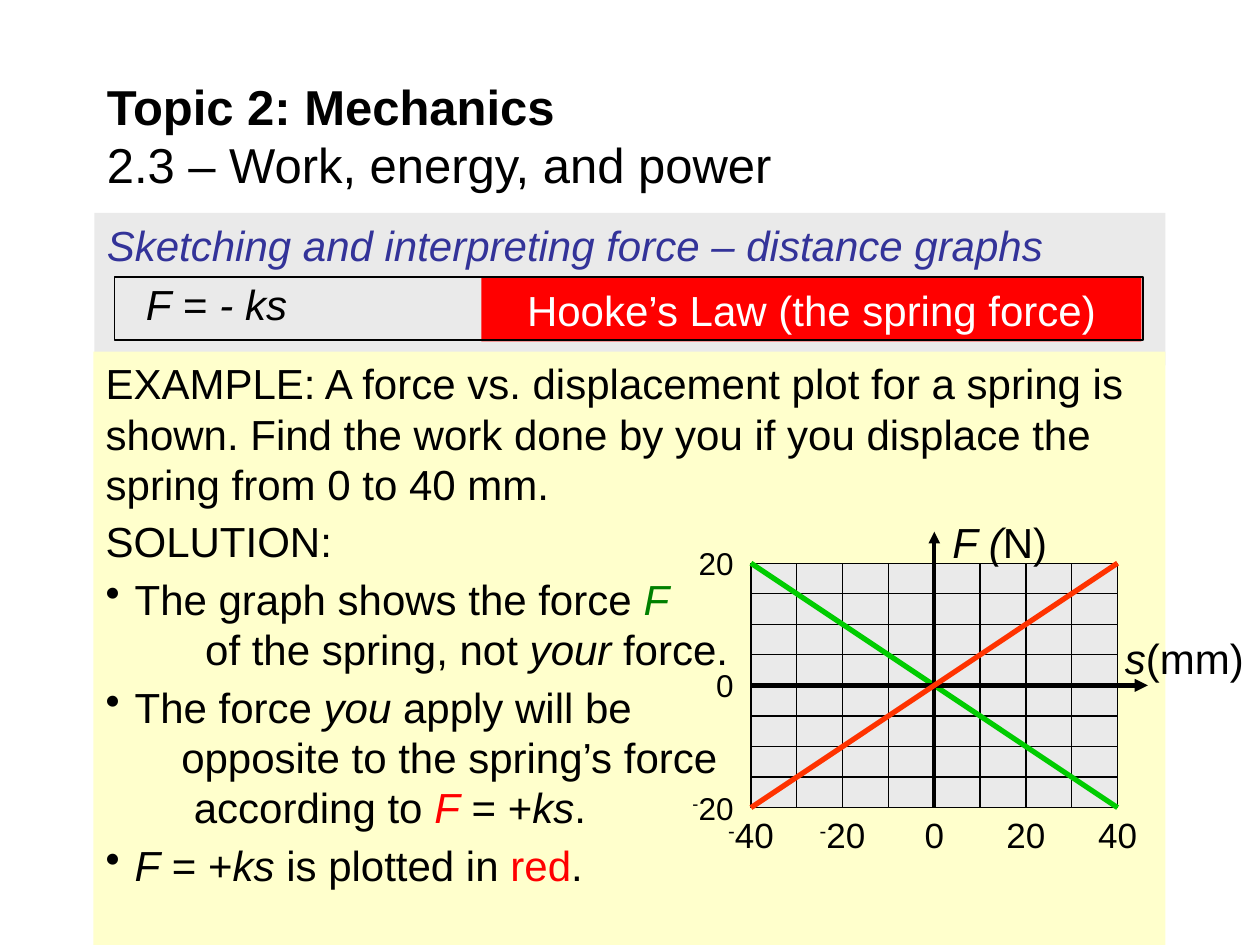
from pptx import Presentation
from pptx.dml.color import RGBColor
from pptx.enum.shapes import MSO_CONNECTOR, MSO_SHAPE
from pptx.enum.text import MSO_ANCHOR, PP_ALIGN
from pptx.oxml.ns import qn
from pptx.util import Inches, Pt
from lxml.etree import SubElement

BLACK, GRAY = "000000", "EAEAEA"
ITALIC = {"italic": True}
RAISED = {"raised": True}


def color(code):
    """Turn a hex string into a colour."""
    return RGBColor.from_string(code)


class Painter:
    """Holds the text style and the current page."""

    font = "Arial"

    def __init__(self, page):
        """Remember the page to draw on."""
        self.page = page

    def rectangle(self, left, top, width, height, fill=None, line=None):
        """Add a rectangle with an optional fill and outline width."""
        box = self.page.shapes.add_shape(
            MSO_SHAPE.RECTANGLE, Inches(left), Inches(top), Inches(width), Inches(height))
        box.shadow.inherit = False
        if fill:
            box.fill.solid()
            box.fill.fore_color.rgb = color(fill)
        else:
            box.fill.background()
        if line:
            box.line.color.rgb = color(BLACK)
            box.line.width = Pt(line)
        else:
            box.line.fill.background()
        return box

    def letter(self, box, lines, size=24, ink=BLACK, align=PP_ALIGN.LEFT,
               anchor=MSO_ANCHOR.TOP, wrap=True):
        """Fill a box with paragraphs given as lists of styled spans."""
        frame = box.text_frame
        frame.word_wrap = wrap
        frame.vertical_anchor = anchor
        frame.text = "\n".join(spans[0][0] for spans in lines)
        for para, spans in zip(frame.paragraphs, lines):
            para.alignment = align
            for text, _ in spans[1:]:
                para.add_run().text = text
            for span, (_, style) in zip(para.runs, spans):
                span.font.name = self.font
                span.font.size = Pt(size)
                span.font.bold = style.get("bold", False)
                span.font.italic = style.get("italic", False)
                span.font.color.rgb = color(style.get("ink", ink))
                if style.get("raised"):
                    span._r.get_or_add_rPr().set("baseline", "30000")
        return frame.paragraphs

    def label(self, left, top, width, height, lines, **style):
        """Add a text box."""
        box = self.page.shapes.add_textbox(
            Inches(left), Inches(top), Inches(width), Inches(height))
        return self.letter(box, lines, **style)

    def indent(self, para, left, bullet=False):
        """Indent a paragraph and hang a bullet in front of it."""
        properties = para._p.get_or_add_pPr()
        properties.set("marL", str(Inches(left)))
        properties.set("indent", str(-Inches(left) if bullet else 0))
        if bullet:
            SubElement(properties, qn("a:buChar")).set("char", "•")

    def line(self, start, end, ink, width, arrow=False):
        """Add a straight line with an optional arrowhead at its end."""
        connector = self.page.shapes.add_connector(
            MSO_CONNECTOR.STRAIGHT, *[Inches(value) for value in (*start, *end)])
        connector.line.color.rgb = color(ink)
        connector.line.width = Pt(width)
        properties = connector._element.spPr
        if arrow:
            SubElement(properties.find(qn("a:ln")), qn("a:tailEnd")).set("type", "triangle")
        SubElement(properties, qn("a:effectLst"))


def draw_header(painter):
    """Draw the title and the heading band."""
    band = painter.rectangle(0.75, 1.69, 8.5, 1.21, GRAY)
    painter.letter(band, [[("Sketching and interpreting force – distance graphs", ITALIC)]],
                   ink="333399")
    painter.label(0.75, 0.58, 8.5, 0.98, [
        [("Topic 2: Mechanics", {"bold": True})],
        [("2.3 – Work, energy, and power", {})],
    ], size=28, anchor=MSO_ANCHOR.MIDDLE)


def draw_example(painter):
    """Draw the example with its bulleted solution."""
    panel = painter.rectangle(0.74, 2.79, 8.51, 4.71, "FFFFCC")
    rows = [
        (0, False, [("EXAMPLE: A force vs. displacement plot for a spring is shown. Find the "
                     "work done by you if you displace the spring from 0 to 40 mm.", {})]),
        (0, False, [("SOLUTION:", {})]),
        (0.23, True, [("The graph shows the force ", {}),
                      ("F", {"italic": True, "ink": "008000"})]),
        (0.79, False, [("of the spring, not ", {}), ("your", ITALIC), (" force.", {})]),
        (0.23, True, [("The force ", {}), ("you", ITALIC), (" apply will be", {})]),
        (0.6, False, [("opposite to the spring’s force", {})]),
        (0.7, False, [("according to ", {}), ("F", {"italic": True, "ink": "FF0000"}),
                      (" = +", {}), ("ks", ITALIC), (".", {})]),
        (0.23, True, [("F", ITALIC), (" = +", {}), ("ks ", ITALIC), ("is plotted in ", {}),
                      ("red", {"ink": "FF0000"}), (".", {})]),
    ]
    paras = painter.letter(panel, [spans for _, _, spans in rows])
    for para, (left, bullet, _) in zip(paras, rows):
        para.space_before = Pt(4 if bullet or left == 0 else 0)
        painter.indent(para, left, bullet)


def draw_law(painter):
    """Draw the framed formula and its name."""
    formula = painter.label(1.06, 2.21, 1.49, 0.35,
                            [[("F", ITALIC), (" = ", {}), ("- ks", ITALIC)]])
    formula[0].line_spacing = 0.9
    name = painter.rectangle(3.82, 2.2, 5.24, 0.51, "FF0000")
    painter.letter(name, [[("Hooke’s Law (the spring force)", {})]], ink="FFFFFF",
                   align=PP_ALIGN.CENTER, anchor=MSO_ANCHOR.MIDDLE)
    painter.rectangle(0.91, 2.2, 8.16, 0.5, line=1)


def draw_graph(painter):
    """Draw the force against displacement graph."""
    left, top, width, height, count = 5.96, 4.47, 2.91, 1.94, 8
    right, bottom = left + width, top + height
    middle, center = top + height / 2, left + width / 2
    for row in range(count):
        for column in range(count):
            painter.rectangle(left + column * width / count, top + row * height / count,
                              width / count, height / count, GRAY, 0.75)
    painter.line((left, top), (right, bottom), "00CC00", 3)
    painter.line((center, bottom), (center, 4.22), BLACK, 2.25, arrow=True)
    painter.label(7.46, 4.05, 0.96, 0.51, [[("F (", ITALIC), ("N)", {})]], wrap=False)
    minus = ("-", RAISED)
    forces = [[("20", {})], [("0", {})], [minus, ("20", {})]]
    for index, spans in enumerate(forces):
        painter.label(5.37, top + index * height / 2 - 0.2, 0.55, 0.4, [spans],
                      size=18, align=PP_ALIGN.RIGHT)
    distances = [[minus, ("40", {})], [minus, ("20", {})], [("0", {})],
                 [("20", {})], [("40", {})]]
    for index, spans in enumerate(distances):
        painter.label(left + index * width / 4 - 0.3, 6.41, 0.6, 0.43, [spans],
                      size=20, align=PP_ALIGN.CENTER)
    painter.label(8.83, 4.97, 1.16, 0.51, [[("s", ITALIC), ("(mm)", {})]], wrap=False)
    painter.line((left, middle), (9.11, middle), BLACK, 2.5, arrow=True)
    painter.line((left, bottom), (right, top), "FF3300", 3)


def main():
    """Build and save the deck."""
    deck = Presentation()
    deck.slide_width, deck.slide_height = Inches(10), Inches(7.5)
    painter = Painter(deck.slides.add_slide(deck.slide_layouts[6]))
    draw_header(painter)
    draw_example(painter)
    draw_law(painter)
    draw_graph(painter)
    deck.save("out.pptx")


if __name__ == "__main__":
    main()
